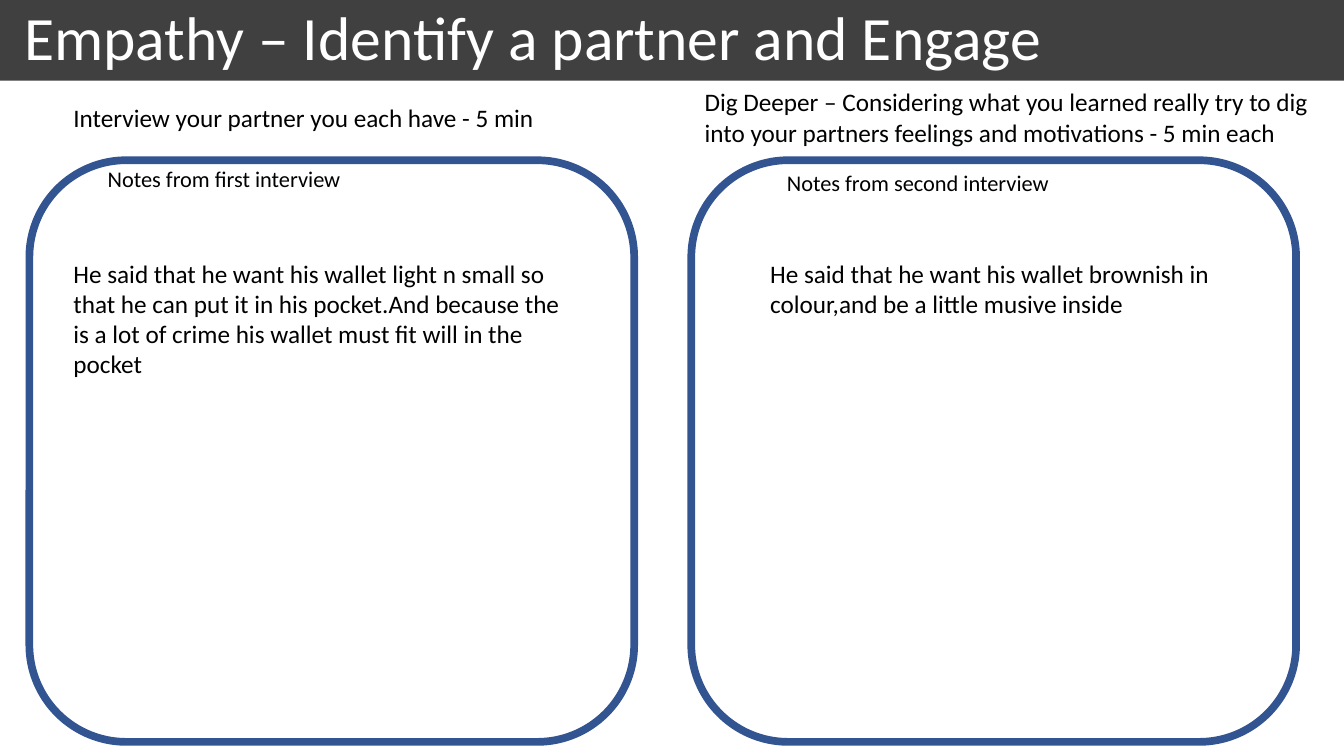
from pptx import Presentation, util as u
from pptx.dml.color import RGBColor
from pptx.enum import shapes, text

COLS, ROWS = 160, 90


def rgb(hex_code):
    return RGBColor.from_string(hex_code)


class Worksheet:
    """Holds the style and the slide; boxes are (column, row, columns, rows)."""
    font, ink, paper = "Calibri", "000000", "FFFFFF"
    bar, frame = "404040", "325491"

    def __init__(self, prs):
        self.cell_w, self.cell_h = prs.slide_width / COLS, prs.slide_height / ROWS
        self.s = prs.slides.add_slide(prs.slide_layouts[5])

    def place(self, col, row, cols, rows):
        return (round(col * self.cell_w), round(row * self.cell_h),
                round(cols * self.cell_w), round(rows * self.cell_h))

    def add_words(self, tf, words, size, color):
        p = tf.paragraphs[0]
        p.alignment = text.PP_ALIGN.LEFT
        r = p.add_run()
        r.text = words
        r.font.name, r.font.size = self.font, u.Pt(size)
        r.font.color.rgb = rgb(color)
        return p

    def title_bar(self, box, words):
        place = self.place(*box)
        sp = self.s.shapes.add_shape(shapes.MSO_SHAPE.RECTANGLE, *place)
        sp.shadow.inherit = False
        sp.fill.solid()
        sp.fill.fore_color.rgb = rgb(self.bar)
        sp.line.fill.background()

        title = self.s.shapes.title
        title.left, title.top, title.width, title.height = place
        # The title must lie in front of its bar
        sp.element.addnext(title.element)
        tf = title.text_frame
        tf.auto_size = text.MSO_AUTO_SIZE.NONE
        tf.vertical_anchor = text.MSO_ANCHOR.MIDDLE
        self.add_words(tf, words, 44, self.paper).line_spacing = 0.9

    def note_frame(self, box):
        sp = self.s.shapes.add_shape(shapes.MSO_SHAPE.ROUNDED_RECTANGLE, *self.place(*box))
        sp.shadow.inherit = False
        sp.fill.background()
        sp.line.color.rgb = rgb(self.frame)
        sp.line.width = u.Pt(5.5)

    def label(self, box, words, size=18):
        tf = self.s.shapes.add_textbox(*self.place(*box)).text_frame
        tf.word_wrap = True
        tf.auto_size = text.MSO_AUTO_SIZE.SHAPE_TO_FIT_TEXT
        self.add_words(tf, words, size, self.ink)


def main():
    prs = Presentation()
    prs.slide_width, prs.slide_height = u.Inches(13.33), u.Inches(7.5)
    sheet = Worksheet(prs)
    sheet.title_bar((0, 0, COLS, 9.6), " Empathy – Identify a partner and Engage")

    interviews = [
        (3.5,
         (7.56, 11.64, 69.72, 4.8), "Interview your partner you each have - 5 min",
         (11.64, 19.08, 40.56, 4.44), "Notes from first interview",
         (7.56, 30.12, 62.52, 15.72),
         "He said that he want his wallet light n small so that he can put it in his "
         "pocket.And because the is a lot of crime his wallet must fit will in the pocket"),
        (82.3,
         (82.7, 9.72, 75.36, 8.52),
         "Dig Deeper – Considering what you learned really try to dig into your partners "
         "feelings and motivations - 5 min each",
         (92.5, 19.56, 39.6, 4.44), "Notes from second interview",
         (90.5, 30.12, 57.12, 8.52),
         "He said that he want his wallet brownish in colour,and be a little musive inside"),
    ]
    for frame_col, task_box, task, heading_box, heading, answer_box, answer in interviews:
        sheet.note_frame((frame_col, 19.08, 72, 69.24))
        sheet.label(task_box, task)
        sheet.label(heading_box, heading, size=16)
        sheet.label(answer_box, answer)

    prs.save("out.pptx")


if __name__ == "__main__":
    main()
